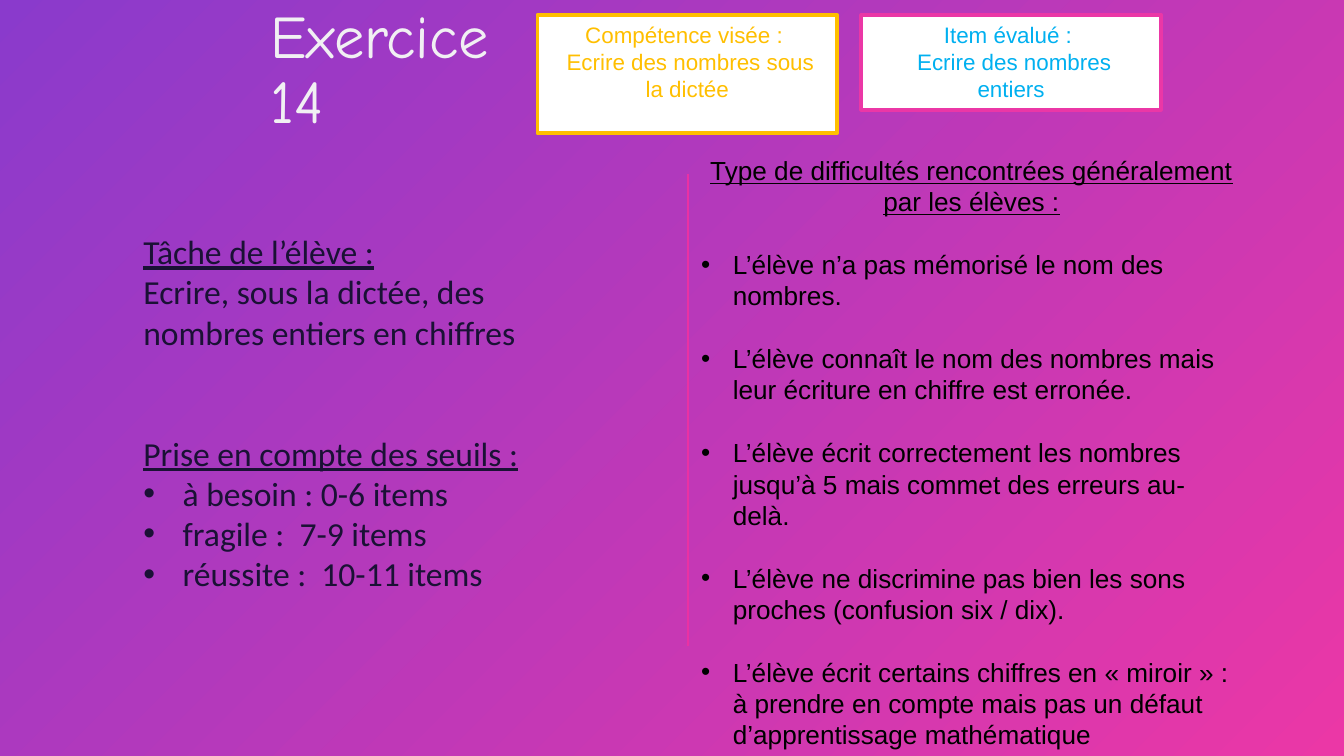
import pptx
import pptx.util
import pptx.dml.color
import pptx.enum.shapes
import pptx.enum.text
import pptx.oxml.ns
import lxml.etree

Cm, Pt = pptx.util.Cm, pptx.util.Pt
ALIGN = pptx.enum.text.PP_ALIGN
ANCHOR = pptx.enum.text.MSO_ANCHOR

COLORS = {
    "violet": "8A3ACC", "pink": "EB37A6", "divider": "EA31A3",
    "white": "FFFFFF", "title": "F1F0F3", "blue": "00B0F0",
    "yellow": "FFBF00", "dark": "1A1135", "black": "000000",
}

# Content
TITLE = "Exercice 14"

# left, width and height in cm, border, text colour, lines
CARDS = [
    (16.28, 5.66, 1.8, "pink", "blue",
     ["Item évalué : ", " Ecrire des nombres entiers"]),
    (10.16, 5.66, 2.24, "yellow", "yellow",
     ["Compétence visée : ", " Ecrire des nombres sous la dictée"]),
]
CARD_TOP = 0.28

# kind, text, number of free lines above
TASK = [
    ("heading", "Tâche de l’élève :", 0),
    ("plain", "Ecrire, sous la dictée, des nombres entiers en chiffres", 0),
    ("heading", "Prise en compte des seuils :", 2),
    ("bullet", " à besoin : 0-6 items", 0),
    ("bullet", " fragile :  7-9 items", 0),
    ("bullet", " réussite :  10-11 items", 0),
]
DIFFICULTIES = [
    ("heading", "Type de difficultés rencontrées généralement par les élèves :", 0),
    ("bullet", "L’élève n’a pas mémorisé le nom des nombres.", 1),
    ("bullet", "L’élève connaît le nom des nombres mais leur écriture en chiffre est erronée.", 1),
    ("bullet", "L’élève écrit correctement les nombres jusqu’à 5 mais commet des erreurs au-delà.", 1),
    ("bullet", "L’élève ne discrimine pas bien les sons proches (confusion six / dix).", 1),
    ("bullet", "L’élève écrit certains chiffres en « miroir » : à prendre en compte mais pas "
               "un défaut d’apprentissage mathématique", 1),
]


def rgb(name):
    return pptx.dml.color.RGBColor.from_string(COLORS[name])


def add_child(parent, tag, **attributes):
    return lxml.etree.SubElement(parent, pptx.oxml.ns.qn(tag), attributes)


def set_font(paragraph, name, size, color):
    paragraph.font.name = name
    paragraph.font.size = Pt(size)
    paragraph.font.color.rgb = rgb(color)


def add_bullet(paragraph, indent):
    properties = paragraph._p.get_or_add_pPr()
    properties.set("marL", str(Cm(indent)))
    properties.set("indent", str(-Cm(indent)))
    add_child(properties, "a:buFont", typeface="Arial")
    add_child(properties, "a:buChar", char="•")


def fill_frame(frame, items, font, size, color, heading_align=ALIGN.LEFT, indent=0.6):
    frame.word_wrap = True
    frame.vertical_anchor = ANCHOR.TOP
    line_height = 1.2 * size
    for index, (kind, text, free_lines) in enumerate(items):
        paragraph = frame.paragraphs[0] if index == 0 else frame.add_paragraph()
        paragraph.text = text
        paragraph.alignment = heading_align if kind in ("heading", "centred") else ALIGN.LEFT
        paragraph.line_spacing = Pt(line_height)
        paragraph.space_before = Pt(free_lines * line_height)
        if kind == "bullet":
            add_bullet(paragraph, indent)
        set_font(paragraph, font, size, color)
        paragraph.font.underline = kind == "heading"


def add_text(slide, left, top, width, height, *content, **options):
    box = slide.shapes.add_textbox(Cm(left), Cm(top), Cm(width), Cm(height))
    fill_frame(box.text_frame, *content, **options)


def add_card(slide, left, width, height, border, color, lines):
    card = slide.shapes.add_shape(pptx.enum.shapes.MSO_SHAPE.RECTANGLE,
                                  Cm(left), Cm(CARD_TOP), Cm(width), Cm(height))
    card.shadow.inherit = False
    card.fill.solid()
    card.fill.fore_color.rgb = rgb("white")
    card.line.color.rgb = rgb(border)
    card.line.width = Pt(2)
    fill_frame(card.text_frame, [("centred", line, 0) for line in lines],
               "Arial", 12, color, heading_align=ALIGN.CENTER)


presentation = pptx.Presentation()
presentation.slide_width, presentation.slide_height = Cm(25.4), Cm(14.29)
slide = presentation.slides.add_slide(presentation.slide_layouts[5])

# Diagonal background
background = slide.background.fill
background.gradient()
background.gradient_angle = 315
for stop, position, color in zip(background.gradient_stops, (0, 1), ("violet", "pink")):
    stop.position = position
    stop.color.rgb = rgb(color)

# Title
title = slide.shapes.title
title.left, title.top, title.width, title.height = Cm(5.11), Cm(0.74), Cm(5.21), Cm(1.22)
frame = title.text_frame
frame.text = TITLE
frame.word_wrap = True
frame.auto_size = pptx.enum.text.MSO_AUTO_SIZE.NONE
frame.vertical_anchor = ANCHOR.MIDDLE
frame.margin_left = frame.margin_right = frame.margin_top = frame.margin_bottom = 0
paragraph = frame.paragraphs[0]
paragraph.alignment = ALIGN.LEFT
paragraph.line_spacing = 0.9
set_font(paragraph, "Comic Neue", 32.4, "title")

# Skill cards
for card in CARDS:
    add_card(slide, *card)

# Task and thresholds
add_text(slide, 2.46, 4.24, 7.85, 7.19, TASK, "Calibri", 18, "dark")

# Divider
divider = slide.shapes.add_connector(pptx.enum.shapes.MSO_CONNECTOR.STRAIGHT,
                                     Cm(13), Cm(3.28), Cm(13), Cm(12.22))
divider.line.color.rgb = rgb("divider")
divider.line.width = Pt(0.75)
add_child(divider._element.spPr, "a:effectLst")

# Usual difficulties
add_text(slide, 13, 2.79, 10.72, 11.63, DIFFICULTIES, "Arial", 14, "black",
         heading_align=ALIGN.CENTER)

presentation.save("out.pptx")
